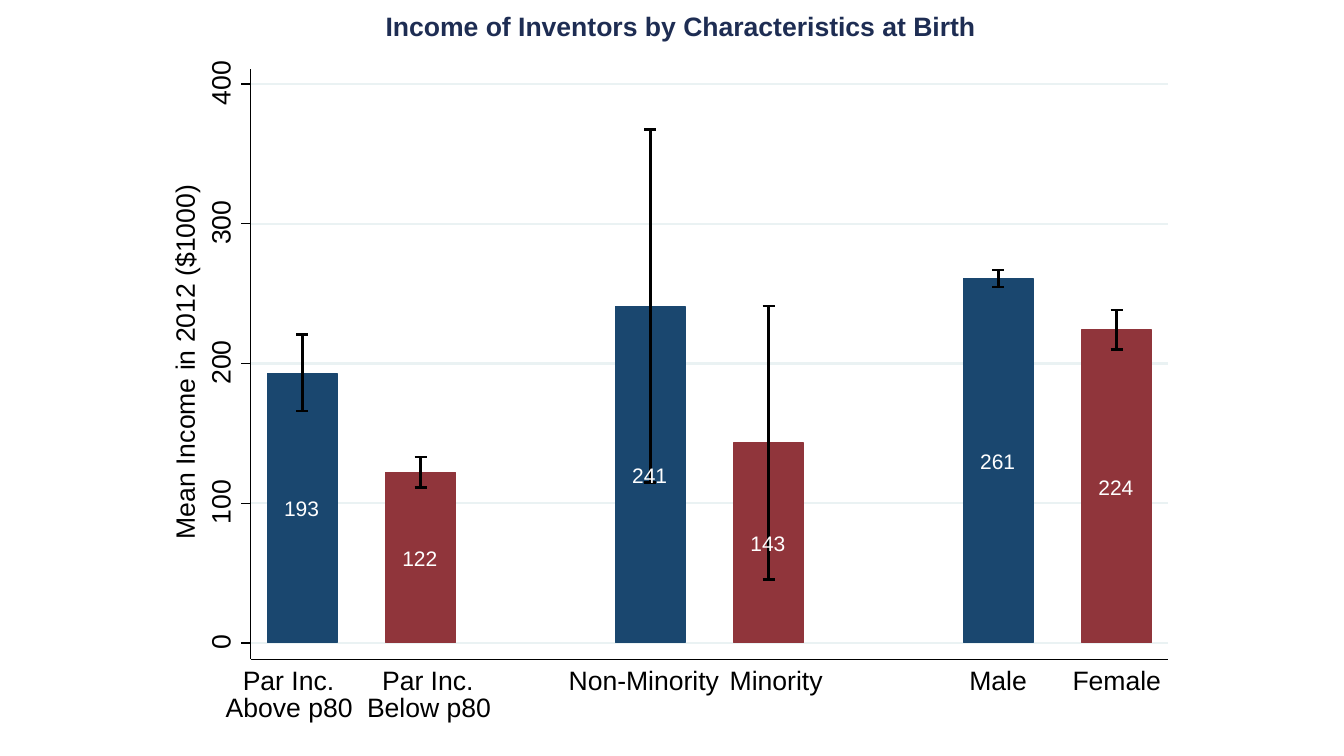
"""Build a slide with a bar diagram of inventors' income and its error bars."""
from lxml import etree
from pptx import Presentation
from pptx.dml.color import RGBColor
from pptx.enum.shapes import MSO_CONNECTOR, MSO_SHAPE
from pptx.enum.text import MSO_ANCHOR, MSO_AUTO_SIZE, PP_ALIGN
from pptx.oxml.ns import qn
from pptx.util import Cm, Pt

STRAIGHT = MSO_CONNECTOR.STRAIGHT
RECT = MSO_SHAPE.RECTANGLE
TOP = MSO_ANCHOR.TOP
FIT = MSO_AUTO_SIZE.SHAPE_TO_FIT_TEXT
CENTER = PP_ALIGN.CENTER

WHITE, BLACK, GRID, NAVY = "FFFFFF", "000000", "EAF2F3", "1E2D53"
BAR_COLORS = ("1A476F", "90353B")
THIN, THICK = 0.88, 1.75

AXIS_X, RIGHT, PLOT_TOP, AXIS_Y = 6.32, 29.44, 1.73, 16.61
ZERO_Y, STEP = 16.2, 3.52
FIRST_X, GROUP_GAP, BAR_GAP, BAR_W = 7.62, 8.77, 2.98, 1.75
TICK, CAP = 0.25, 0.15
LABEL_H = 0.89

GROUPS = (
    ((193, 166.1, 220.9), (122, 111.2, 132.9)),
    ((241, 114.8, 367.5), (143, 45.5, 241.2)),
    ((261, 254.9, 267.1), (224, 210.1, 238.3)),
)
LABELS = (
    ("Par Inc.", 6.12, 16.74, 2.59),
    ("Above p80", 5.69, 17.4, 3.51),
    ("Par Inc.", 9.63, 16.74, 2.59),
    ("Below p80", 9.25, 17.4, 3.38),
    ("Non-Minority", 14.33, 16.74, 4.09),
    ("Minority", 18.39, 16.74, 2.64),
    ("Male", 24.43, 16.74, 1.75),
    ("Female", 27.03, 16.74, 2.54),
)


def rgb(value):
    return RGBColor.from_string(value)


def y_of(value):
    return ZERO_Y - STEP * value / 100


class Diagram:
    """Hold the text style, the slide and the group that is drawn on."""

    font = "Arial"

    def __init__(self, prs):
        self.s = prs.slides.add_slide(prs.slide_layouts[5])
        self.shapes = self.s.shapes.add_group_shape().shapes

    def fill_text(self, sp, text, size, color, bold=False, wrap=False):
        tf = sp.text_frame
        tf.margin_left = tf.margin_right = tf.margin_top = tf.margin_bottom = 0
        tf.word_wrap = wrap
        tf.auto_size = FIT
        tf.vertical_anchor = TOP
        p = tf.paragraphs[0]
        r = p.add_run()
        r.text = text
        r.font.name, r.font.size, r.font.bold = self.font, Pt(size), bold
        r.font.color.rgb = rgb(color)
        return p

    def title(self, text, x, y, w, h):
        sp = self.s.shapes.title
        sp.left, sp.top, sp.width, sp.height = Cm(x), Cm(y), Cm(w), Cm(h)
        p = self.fill_text(sp, text, 19, NAVY, bold=True, wrap=True)
        p.alignment = CENTER

    def text(self, text, x, y, w, h=LABEL_H, size=19, color=BLACK):
        sp = self.shapes.add_textbox(Cm(x), Cm(y), Cm(w), Cm(h))
        self.fill_text(sp, text, size, color)
        return sp

    def upright(self, text, cx, cy, w):
        self.text(text, cx - w / 2, cy - LABEL_H / 2, w).rotation = 270

    def rect(self, x, y, w, h, color):
        sp = self.shapes.add_shape(RECT, Cm(x), Cm(y), Cm(w), Cm(h))
        sp.shadow.inherit = False
        sp.fill.solid()
        sp.fill.fore_color.rgb = rgb(color)
        sp.line.color.rgb = rgb(color)
        sp.line.width = Pt(THIN)

    def line(self, x1, y1, x2, y2, color=BLACK, width=THIN):
        sp = self.shapes.add_connector(STRAIGHT, Cm(x1), Cm(y1), Cm(x2), Cm(y2))
        sp.line.color.rgb = rgb(color)
        sp.line.width = Pt(width)
        etree.SubElement(sp._element.spPr, qn("a:effectLst"))

    def error_bar(self, cx, low, high):
        self.line(cx, y_of(high), cx, y_of(low), width=THICK)
        for value in (low, high):
            self.line(cx - CAP, y_of(value), cx + CAP, y_of(value), width=THICK)


def main():
    prs = Presentation()
    prs.slide_width, prs.slide_height = Cm(33.87), Cm(19.05)
    d = Diagram(prs)
    d.title("Income of Inventors by Characteristics at Birth", 4.45, 0.25, 25.4, 0.81)

    d.rect(AXIS_X, PLOT_TOP, RIGHT - AXIS_X, AXIS_Y - PLOT_TOP, WHITE)
    ticks = range(0, 401, 100)
    for value in ticks:
        d.line(AXIS_X, y_of(value), RIGHT, y_of(value), GRID, THICK)

    bars = [(FIRST_X + g * GROUP_GAP + i * BAR_GAP, BAR_COLORS[i], *bar)
            for g, group in enumerate(GROUPS) for i, bar in enumerate(group)]
    for cx, color, mean, low, high in bars:
        d.rect(cx - BAR_W / 2, y_of(mean), BAR_W, ZERO_Y - y_of(mean), color)
    for cx, color, mean, low, high in bars:
        d.error_bar(cx, low, high)
        d.text(str(mean), cx - 0.46, y_of(mean / 2) - 0.31, 1.09, 0.71, 15, WHITE)

    d.line(AXIS_X, AXIS_Y, AXIS_X, PLOT_TOP)
    for value in ticks:
        d.line(AXIS_X, y_of(value), AXIS_X - TICK, y_of(value))
        d.upright(str(value), 5.59, y_of(value) - 0.17, 1.4 if value else 0.66)
    d.upright("Mean Income in 2012 ($1000)", 4.69, 9, 9.17)

    d.line(AXIS_X, AXIS_Y, RIGHT, AXIS_Y)
    for label in LABELS:
        d.text(*label)
    prs.save("out.pptx")


if __name__ == "__main__":
    main()
